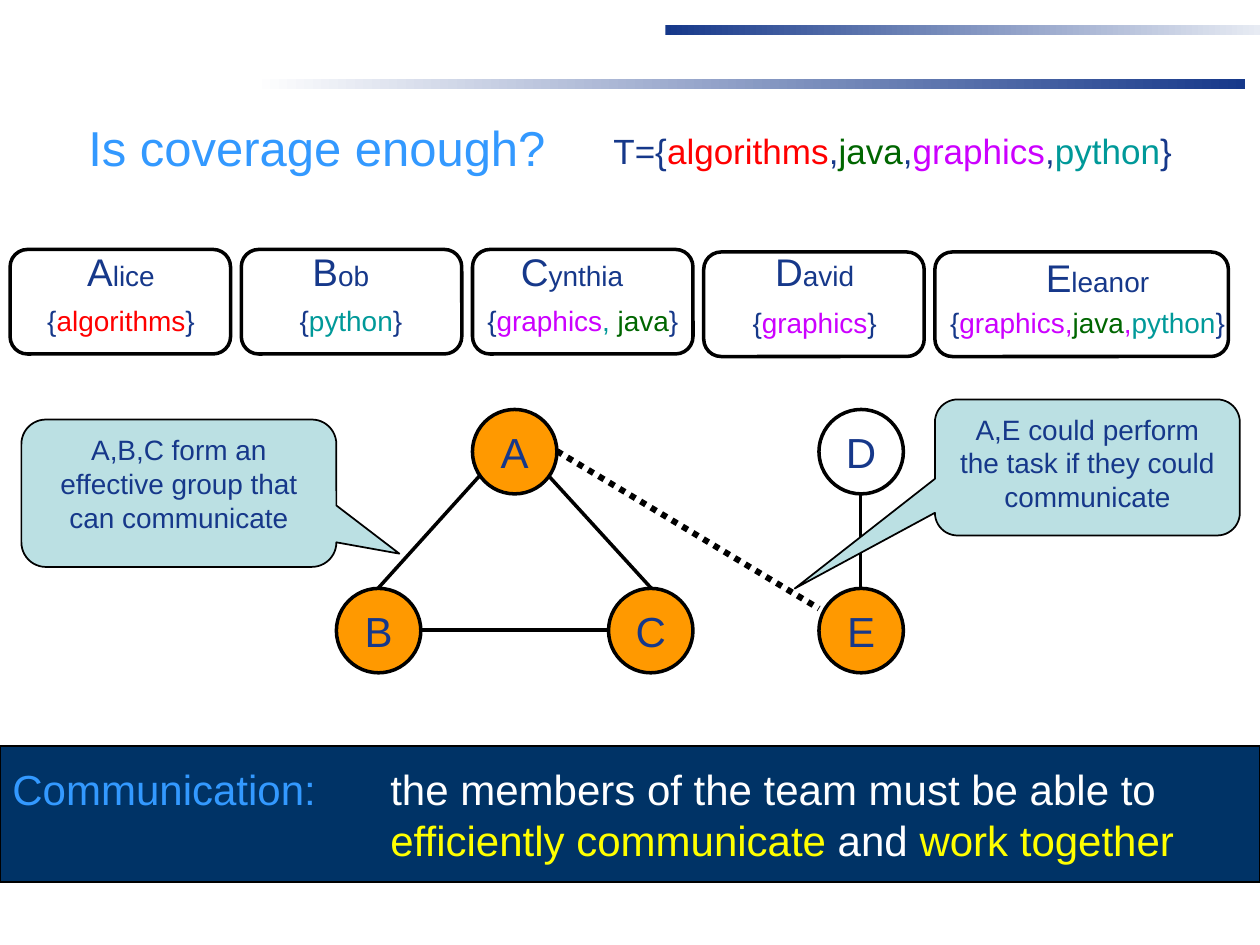
from lxml import etree
from pptx import Presentation
from pptx.dml.color import RGBColor
from pptx.enum.dml import MSO_LINE
from pptx.enum.shapes import MSO_CONNECTOR, MSO_SHAPE
from pptx.enum.text import MSO_ANCHOR, PP_ALIGN
from pptx.oxml.ns import qn
from pptx.util import Inches, Pt

COLORS = {
    "navy": "16388A", "pale": "E7EBF3", "white": "FFFFFF", "black": "000000",
    "sky": "3399FF", "band": "003366", "yellow": "FFFF00", "orange": "FF9900",
    "callout": "BBE0E3", "red": "FF0000", "green": "006600",
    "purple": "CC00FF", "teal": "009999",
}
ALGORITHMS = ("algorithms", "red")
JAVA = ("java", "green")
GRAPHICS = ("graphics", "purple")
PYTHON = ("python", "teal")
COMMA = (",", "navy")
NODE_SIZE = 0.67


def rgb(name):
    return RGBColor.from_string(COLORS[name])


def write_paragraph(paragraph, spans, size, align=PP_ALIGN.CENTER):
    paragraph.alignment = align
    paragraph.font.name = "Arial"
    paragraph.font.size = Pt(size)
    for text, color, *run_size in spans:
        run = paragraph.add_run()
        run.text = text
        run.font.color.rgb = rgb(color)
        if run_size:
            run.font.size = Pt(run_size[0])


def add_shape(slide, kind, box, fill=None, line=None, weight=1):
    shape = slide.shapes.add_shape(kind, *map(Inches, box))
    shape.shadow.inherit = False
    if fill:
        shape.fill.solid()
        shape.fill.fore_color.rgb = rgb(fill)
    else:
        shape.fill.background()
    if line:
        shape.line.color.rgb = rgb(line)
        shape.line.width = Pt(weight)
    else:
        shape.line.fill.background()
    return shape


def add_text(slide, box, spans, size):
    text_box = slide.shapes.add_textbox(*map(Inches, box))
    text_box.text_frame.word_wrap = True
    write_paragraph(text_box.text_frame.paragraphs[0], spans, size)


def add_gradient_bar(slide, box, start, end):
    bar = add_shape(slide, MSO_SHAPE.RECTANGLE, box)
    bar.fill.gradient()
    bar.fill.gradient_angle = 0
    for stop, position, color in zip(bar.fill.gradient_stops, (0, 1), (start, end)):
        stop.position = position
        stop.color.rgb = rgb(color)


def add_header(slide, box):
    left, top, width, height = box
    title = slide.shapes.title
    title.left, title.top, title.width, title.height = map(Inches, box)
    title.text_frame.vertical_anchor = MSO_ANCHOR.BOTTOM
    write_paragraph(title.text_frame.paragraphs[0], [("Is coverage enough?", "sky")], 28)
    task = [("T={", "navy"), ALGORITHMS, COMMA, JAVA, COMMA, GRAPHICS, COMMA,
            PYTHON, ("}", "navy")]
    add_text(slide, (left + 5.84, top + 0.28, 5.33, 0.44), task, 20)


def add_person_card(slide, box, name, skills, name_offset, skills_offset, skills_width):
    left, top, width, height = box
    add_shape(slide, MSO_SHAPE.ROUNDED_RECTANGLE, box, line="black", weight=2)
    name_left, name_top = name_offset
    add_text(slide, (left + name_left, top + name_top, 1.58, 0.47),
             [(name[0], "navy", 22), (name[1:], "navy")], 16)
    add_text(slide, (left + skills_left(skills_offset), top + 0.38, skills_width, 0.37),
             [("{", "navy"), *skills, ("}", "navy")], 16)


def skills_left(offset):
    return offset


def add_people(slide, left, top):
    people = [
        ("Alice", [ALGORITHMS], 0, 1.75, (0.09, -0.06), 0.09, 1.58),
        ("Bob", [PYTHON], 0, 1.75, (0, -0.06), 0.08, 1.58),
        ("Cynthia", [GRAPHICS, (", ", "teal"), JAVA], 0, 1.75, (0, -0.06), 0, 1.75),
        ("David", [GRAPHICS], 0.02, 1.75, (0.09, -0.08), 0.09, 1.58),
        ("Eleanor", [GRAPHICS, (",", "purple"), JAVA, (",", "purple"), PYTHON],
         0.02, 2.33, (0.5, -0.03), 0, 2.42),
    ]
    for index, (name, skills, drop, width, *offsets) in enumerate(people):
        box = (left + index * 1.835, top + drop, width, 0.83)
        add_person_card(slide, box, name, skills, *offsets)


def add_link(slide, start, end, weight=2, dash=None):
    link = slide.shapes.add_connector(MSO_CONNECTOR.STRAIGHT,
                                      *map(Inches, (*start, *end)))
    link.line.color.rgb = rgb("black")
    link.line.width = Pt(weight)
    if dash:
        link.line.dash_style = dash
    etree.SubElement(link._element.spPr, qn("a:effectLst"))


def add_network(slide, left, top):
    def at(x, y):
        return left + x, top + y

    links = [((0.66, 1.75), (2.16, 1.75)), ((0.33, 1.42), (1.16, 0.5)),
             ((1.66, 0.5), (2.5, 1.42)), ((4.16, 1.42), (4.16, 0.67))]
    for start, end in links:
        add_link(slide, at(*start), at(*end))
    nodes = [("D", 3.83, 0, None), ("A", 1.08, 0, "orange"), ("E", 3.83, 1.42, "orange"),
             ("C", 2.16, 1.42, "orange"), ("B", 0, 1.42, "orange")]
    for label, x, y, fill in nodes:
        node = add_shape(slide, MSO_SHAPE.OVAL, (*at(x, y), NODE_SIZE, NODE_SIZE),
                         fill, "black", 2)
        node.text_frame.word_wrap = False
        node.text_frame.vertical_anchor = MSO_ANCHOR.MIDDLE
        write_paragraph(node.text_frame.paragraphs[0], [(label, "navy")], 24)
    add_link(slide, at(1.75, 0.33), at(3.83, 1.58), 3.5, MSO_LINE.ROUND_DOT)


def add_callout(slide, box, text, pointer):
    callout = add_shape(slide, MSO_SHAPE.ROUNDED_RECTANGULAR_CALLOUT, box,
                        "callout", "black")
    callout.adjustments[0], callout.adjustments[1] = pointer
    callout.text_frame.word_wrap = True
    callout.text_frame.vertical_anchor = MSO_ANCHOR.TOP
    write_paragraph(callout.text_frame.paragraphs[0], [(text, "navy")], 16)


def add_definition_band(slide, box):
    band = add_shape(slide, MSO_SHAPE.RECTANGLE, box, "band", "black")
    frame = band.text_frame
    frame.word_wrap = True
    frame.vertical_anchor = MSO_ANCHOR.MIDDLE
    lines = [
        [("Communication:\t", "sky"), ("the members of the team must be able to", "white")],
        [("\t", "white"), ("efficiently communicate", "yellow"), (" and ", "white"),
         ("work together", "yellow")],
    ]
    for index, spans in enumerate(lines):
        paragraph = frame.add_paragraph() if index else frame.paragraphs[0]
        tabs = etree.SubElement(paragraph._p.get_or_add_pPr(), qn("a:tabLst"))
        etree.SubElement(tabs, qn("a:tab"), pos=str(Inches(3)), algn="l")
        write_paragraph(paragraph, spans, 24, PP_ALIGN.LEFT)


def main():
    presentation = Presentation()
    presentation.slide_width, presentation.slide_height = Inches(10), Inches(7.5)
    slide = presentation.slides.add_slide(presentation.slide_layouts[5])
    add_gradient_bar(slide, (2.01, 0.63, 7.87, 0.08), "white", "navy")
    add_gradient_bar(slide, (5.28, 0.2, 4.72, 0.08), "navy", "pale")
    add_header(slide, (-1.42, 0.7, 7.87, 0.75))
    add_definition_band(slide, (0, 5.92, 10, 1.08))
    add_people(slide, 0.08, 1.98)
    add_network(slide, 2.67, 3.25)
    add_callout(slide, (7.42, 3.17, 2.42, 1.08),
                "A,E could perform the task if they could communicate", (-0.96, 0.89))
    add_callout(slide, (0.17, 3.33, 2.5, 1.17),
                "A,B,C form an effective group that can communicate", (0.7, 0.41))
    presentation.save("out.pptx")


if __name__ == "__main__":
    main()
